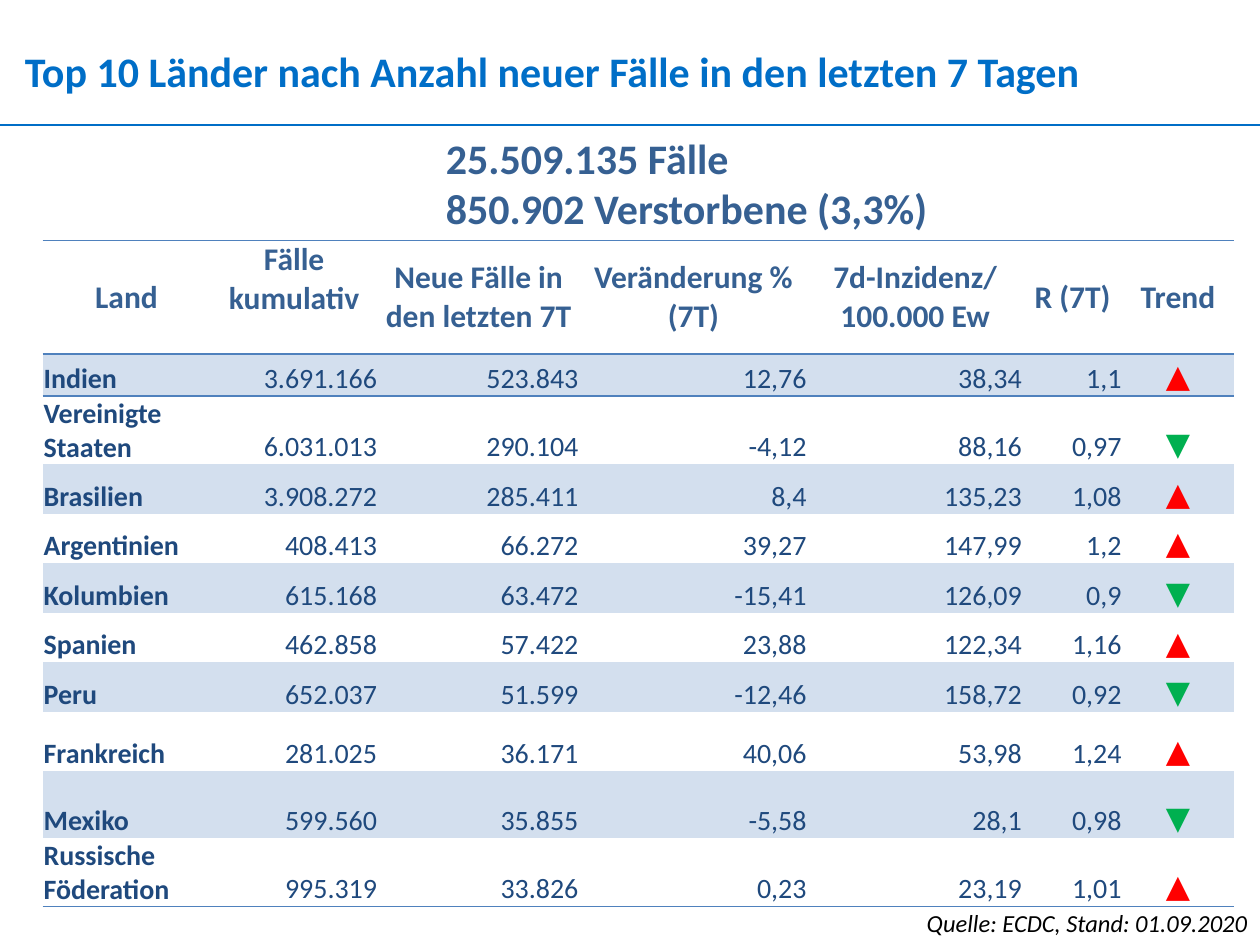
import lxml.etree
import pptx
import pptx.dml.color
import pptx.enum.shapes
import pptx.enum.text
import pptx.oxml.ns
import pptx.util

Cm = pptx.util.Cm
Pt = pptx.util.Pt
RGBColor = pptx.dml.color.RGBColor
PP_ALIGN = pptx.enum.text.PP_ALIGN
MSO_ANCHOR = pptx.enum.text.MSO_ANCHOR
MSO_AUTO_SIZE = pptx.enum.text.MSO_AUTO_SIZE
qn = pptx.oxml.ns.qn

FONT = "Calibri"
TITLE_BLUE = RGBColor(0x00, 0x6E, 0xC7)
HEADING_BLUE = RGBColor(0x36, 0x60, 0x92)
TEXT_BLUE = RGBColor(0x1F, 0x49, 0x7D)
BORDER_BLUE = RGBColor(0x4F, 0x81, 0xBD)
BAND_BLUE = RGBColor(0xD3, 0xDF, 0xEE)
RED = RGBColor(0xFF, 0x00, 0x00)
GREEN = RGBColor(0x00, 0xB0, 0x50)
BLACK = RGBColor(0x00, 0x00, 0x00)

PLAIN_TABLE_STYLE = "{2D5ABB26-0587-4C30-8999-92F81FD0307C}"
TREND_COLORS = {"▲": RED, "▼": GREEN}
COLUMN_WIDTHS = [3.38, 3.38, 4.06, 4.6, 4.34, 2.01, 2.24]
ROW_HEIGHTS = [2.29, 0.84, 1.35, 1, 1, 1, 1, 1, 1.19, 1.35, 1]
HEADERS = ["Land", "Fälle kumulativ", "Neue Fälle in den letzten 7T",
           "Veränderung % (7T)", "7d-Inzidenz/ 100.000 Ew", "R (7T)", "Trend"]
COUNTRIES = [
    ["Indien", "3.691.166", "523.843", "12,76", "38,34", "1,1", "▲"],
    ["Vereinigte Staaten", "6.031.013", "290.104", "-4,12", "88,16", "0,97", "▼"],
    ["Brasilien", "3.908.272", "285.411", "8,4", "135,23", "1,08", "▲"],
    ["Argentinien", "408.413", "66.272", "39,27", "147,99", "1,2", "▲"],
    ["Kolumbien", "615.168", "63.472", "-15,41", "126,09", "0,9", "▼"],
    ["Spanien", "462.858", "57.422", "23,88", "122,34", "1,16", "▲"],
    ["Peru", "652.037", "51.599", "-12,46", "158,72", "0,92", "▼"],
    ["Frankreich", "281.025", "36.171", "40,06", "53,98", "1,24", "▲"],
    ["Mexiko", "599.560", "35.855", "-5,58", "28,1", "0,98", "▼"],
    ["Russische Föderation", "995.319", "33.826", "0,23", "23,19", "1,01", "▲"],
]


def format_paragraph(paragraph, size, color, bold=False, italic=False,
                     alignment=PP_ALIGN.LEFT):
    paragraph.alignment = alignment
    font = paragraph.font
    font.name = FONT
    font.size = Pt(size)
    font.bold = bold
    font.italic = italic
    font.color.rgb = color


def set_margins(target, left, top, right, bottom):
    target.margin_left = Cm(left)
    target.margin_top = Cm(top)
    target.margin_right = Cm(right)
    target.margin_bottom = Cm(bottom)


def add_title(slide, left, top, width, height):
    title = slide.shapes.title
    title.left, title.top = Cm(left), Cm(top)
    title.width, title.height = Cm(width), Cm(height)
    frame = title.text_frame
    frame.text = "Top 10 Länder nach Anzahl neuer Fälle in den letzten 7 Tagen"
    frame.auto_size = MSO_AUTO_SIZE.NONE
    frame.vertical_anchor = MSO_ANCHOR.TOP
    set_margins(frame, 0, 0, 0, 0)
    format_paragraph(frame.paragraphs[0], 24, TITLE_BLUE, bold=True)


def add_rule(slide, left, top, width):
    rule = slide.shapes.add_connector(
        pptx.enum.shapes.MSO_CONNECTOR.STRAIGHT,
        Cm(left), Cm(top), Cm(left + width), Cm(top))
    rule.line.color.rgb = TITLE_BLUE
    rule.line.width = Pt(1.5)
    lxml.etree.SubElement(rule._element.spPr, qn("a:effectLst"))


def add_text(slide, left, top, width, height, text, wrap, **style):
    box = slide.shapes.add_textbox(Cm(left), Cm(top), Cm(width), Cm(height))
    frame = box.text_frame
    frame.text = text
    frame.word_wrap = wrap
    frame.auto_size = MSO_AUTO_SIZE.SHAPE_TO_FIT_TEXT
    for paragraph in frame.paragraphs:
        format_paragraph(paragraph, **style)


def add_border(cell, side):
    properties = cell._tc.get_or_add_tcPr()
    line = lxml.etree.Element(qn("a:" + side), w=str(Pt(1)))
    fill = lxml.etree.SubElement(line, qn("a:solidFill"))
    lxml.etree.SubElement(fill, qn("a:srgbClr"), val=str(BORDER_BLUE))
    # Border lines come before the fill, top before bottom
    properties.insert(len(properties.findall(qn("a:lnT"))), line)


def fill_header_cell(cell, text):
    cell.text = text
    cell.vertical_anchor = MSO_ANCHOR.MIDDLE
    set_margins(cell, 0.15, 0, 0.15, 0)
    format_paragraph(cell.text_frame.paragraphs[0], 18, HEADING_BLUE,
                     bold=True, alignment=PP_ALIGN.CENTER)
    cell.fill.background()
    add_border(cell, "lnT")
    add_border(cell, "lnB")


def fill_country_cell(cell, text, column, banded):
    cell.text = text
    cell.vertical_anchor = MSO_ANCHOR.BOTTOM
    set_margins(cell, 0.02, 0.02, 0.02, 0)
    paragraph = cell.text_frame.paragraphs[0]
    if text in TREND_COLORS:
        format_paragraph(paragraph, 18, TREND_COLORS[text],
                         alignment=PP_ALIGN.CENTER)
    elif column == 0:
        format_paragraph(paragraph, 16, TEXT_BLUE, bold=True)
    else:
        format_paragraph(paragraph, 16, TEXT_BLUE, alignment=PP_ALIGN.RIGHT)
    if banded:
        cell.fill.solid()
        cell.fill.fore_color.rgb = BAND_BLUE
    else:
        cell.fill.background()


def add_country_table(slide, left, top):
    graphic_frame = slide.shapes.add_table(
        len(ROW_HEIGHTS), len(COLUMN_WIDTHS), Cm(left), Cm(top),
        Cm(sum(COLUMN_WIDTHS)), Cm(sum(ROW_HEIGHTS)))
    table = graphic_frame.table
    table._tbl.tblPr.find(qn("a:tableStyleId")).text = PLAIN_TABLE_STYLE
    for column, width in zip(table.columns, COLUMN_WIDTHS):
        column.width = Cm(width)
    for row, height in zip(table.rows, ROW_HEIGHTS):
        row.height = Cm(height)

    # Header row; the cumulative heading sits higher than the others
    for column, text in enumerate(HEADERS):
        fill_header_cell(table.cell(0, column), text)
    table.cell(0, 1).margin_bottom = Cm(0.76)

    # Country rows, every other one banded
    for row, values in enumerate(COUNTRIES, start=1):
        for column, text in enumerate(values):
            fill_country_cell(table.cell(row, column), text, column, row % 2 == 1)
    for column in range(len(HEADERS)):
        add_border(table.cell(1, column), "lnT")
        add_border(table.cell(len(COUNTRIES), column), "lnB")


def main():
    presentation = pptx.Presentation()
    presentation.slide_width = Cm(25.4)
    presentation.slide_height = Cm(19.05)
    slide = presentation.slides.add_slide(presentation.slide_layouts[5])

    # Heading
    add_title(slide, 0.5, 0.92, 24.97, 1.02)
    add_rule(slide, 0, 2.52, 25.4)

    # Worldwide totals and source
    add_text(slide, 8.74, 2.54, 10.31, 2.31,
             "25.509.135 Fälle\n850.902 Verstorbene (3,3%)", wrap=False,
             size=24, color=HEADING_BLUE, bold=True)
    add_text(slide, 16.41, 18.19, 8.99, 0.86,
             "Quelle: ECDC, Stand: 01.09.2020", wrap=True,
             size=14, color=BLACK, italic=True, alignment=PP_ALIGN.RIGHT)

    # Countries
    add_country_table(slide, 0.86, 4.85)
    presentation.save("out.pptx")


if __name__ == "__main__":
    main()
